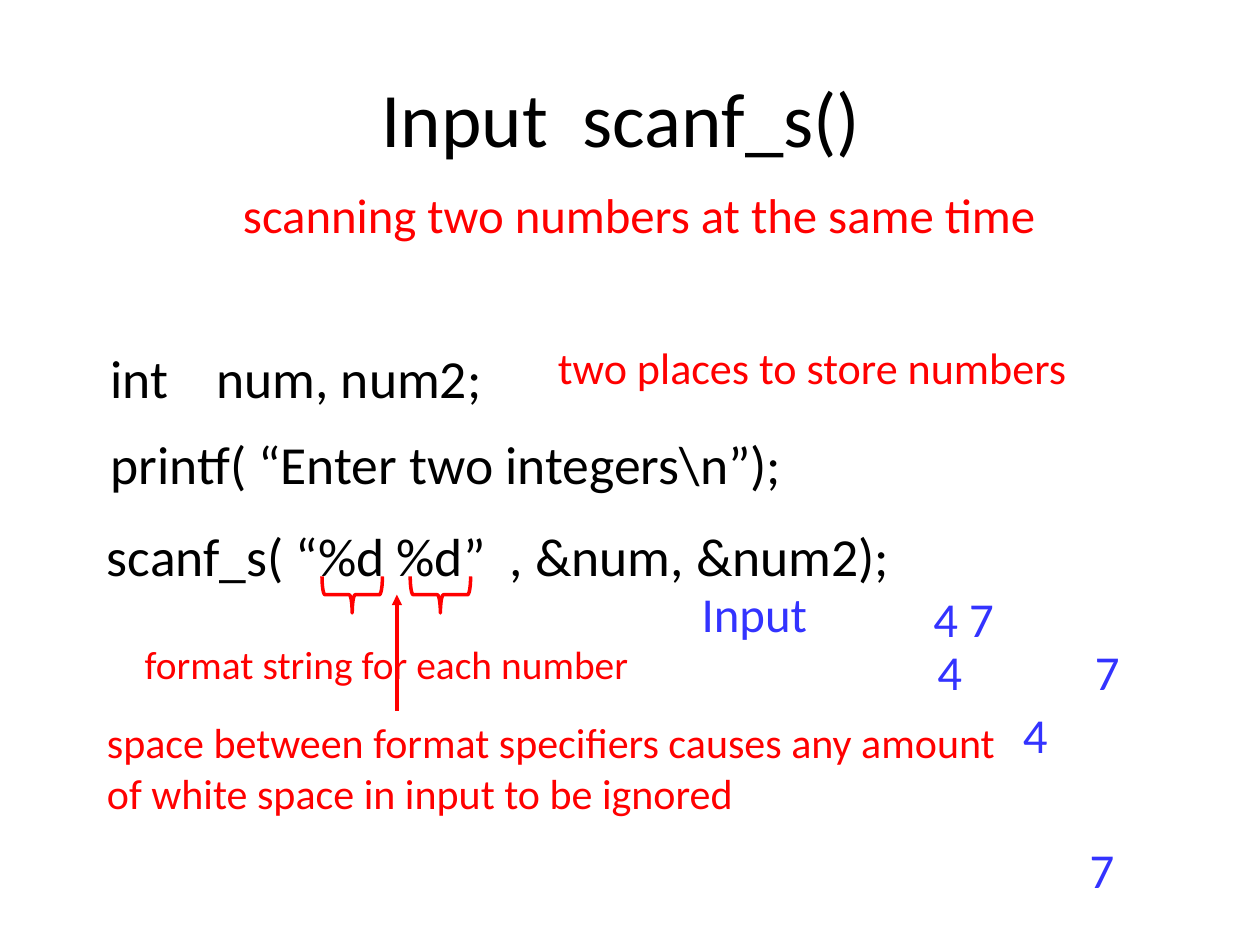
from dataclasses import dataclass

from lxml.etree import SubElement
from pptx import Presentation
from pptx.dml.color import RGBColor
from pptx.enum.shapes import MSO_CONNECTOR as Connector, MSO_SHAPE as Shape
from pptx.enum.text import MSO_ANCHOR as Anchor, PP_ALIGN as Align
from pptx.oxml.ns import qn
from pptx.util import Inches, Pt


@dataclass(frozen=True)
class Theme:
    font: str = "Calibri"
    ink: str = "000000"
    note: str = "FF0000"
    sample: str = "3333FF"
    title_size: float = 44
    code_size: float = 30.6
    lead_size: float = 27.9
    storage_size: float = 25.2
    space_size: float = 24
    format_size: float = 22.5
    stroke: float = 2


@dataclass(frozen=True)
class Box:
    left: float
    top: float
    width: float
    height: float

    def area(self, column, row, columns, rows):
        return Box(self.left + column, self.top + row, columns, rows)

    def lengths(self):
        return [cells(n) for n in (self.left, self.top, self.width, self.height)]


THEME = Theme()
COLUMNS, ROWS = 100, 75


def cells(count):
    return Inches(round(count / 10, 2))


def rgb(value):
    return RGBColor.from_string(value)


def add_text(slide, box, text, size=THEME.lead_size, color=THEME.ink,
             align=Align.LEFT, anchor=Anchor.TOP, tab=None, gap=2, indent=0):
    frame = slide.shapes.add_textbox(*box.lengths()).text_frame
    frame.word_wrap = True
    frame.vertical_anchor = anchor
    for index, line in enumerate(text.split("\n")):
        paragraph = frame.paragraphs[0] if index == 0 else frame.add_paragraph()
        paragraph.alignment = align
        paragraph.space_before = Pt(gap if index else 2)
        properties = paragraph._p.get_or_add_pPr()
        if index and indent:
            properties.set("marL", str(cells(indent)))
        if tab:
            stops = SubElement(properties, qn("a:tabLst"))
            SubElement(stops, qn("a:tab"), pos=str(cells(tab)), algn="l")
        run = paragraph.add_run()
        run.text = line
        run.font.name = THEME.font
        run.font.size = Pt(size)
        run.font.color.rgb = rgb(color)


def style_stroke(line):
    line.color.rgb = rgb(THEME.note)
    line.width = Pt(THEME.stroke)


def add_brace(slide, box):
    brace = slide.shapes.add_shape(Shape.RIGHT_BRACE, *box.lengths())
    brace.rotation = 90
    brace.shadow.inherit = False
    brace.fill.background()
    style_stroke(brace.line)


def add_arrow(slide, column, tail_row, head_row):
    arrow = slide.shapes.add_connector(
        Connector.STRAIGHT, cells(column), cells(tail_row), cells(column), cells(head_row))
    style_stroke(arrow.line)
    SubElement(arrow.line._get_or_add_ln(), qn("a:tailEnd"), type="triangle")
    SubElement(arrow._element.spPr, qn("a:effectLst"))


def place_heading(slide, box):
    add_text(slide, box.area(0, 0, box.width, 12.5), "Input  scanf_s() ",
             size=THEME.title_size, align=Align.CENTER, anchor=Anchor.MIDDLE)
    add_text(slide, box.area(13.3, 11.2, 69.2, 4.9),
             "scanning two numbers at the same time", color=THEME.note)


def place_code(slide, box):
    statements = [
        (0.3, 0, 35.6, "int\tnum, num2;"),
        (0.3, 6.8, 56.4, "printf( “Enter two integers\\n”);"),
        (0, 14.1, 69.2, "scanf_s( “%d %d”  , &num, &num2);"),
    ]
    for column, row, columns, statement in statements:
        add_text(slide, box.area(column, row, columns, 5.3), statement,
                 size=THEME.code_size, tab=8.4 if "\t" in statement else None)
    add_text(slide, box.area(35.8, -0.4, 44.5, 5), "two places to store numbers",
             size=THEME.storage_size, color=THEME.note)


def place_format_notes(slide, box):
    for specifier in range(2):
        add_brace(slide, box.area(19 + 7 * specifier, 0, 2.9, 4.8))
    add_text(slide, box.area(3, 5.5, 44.5, 5), "format string for each number",
             size=THEME.format_size, color=THEME.note)
    add_text(slide, box.area(0, 11.6, 75.8, 9.4),
             "space between format specifiers causes any amount "
             "of white space in input to be ignored",
             size=THEME.space_size, color=THEME.note)
    add_arrow(slide, box.left + 24, box.top + 11.6, box.top + 2.4)


def place_input_samples(slide, box):
    add_text(slide, box.area(0, 0, 12.8, 5), "Input", color=THEME.sample)
    add_text(slide, box.area(18.4, 0.4, 9.8, 5), "4 7", color=THEME.sample)
    add_text(slide, box.area(18.7, 4.6, 23.2, 5), "4\t7", color=THEME.sample, tab=12.5)
    add_text(slide, box.area(25.5, 9.6, 17.3, 15.4), "4\n7",
             color=THEME.sample, gap=44, indent=5.3)


def main():
    deck = Presentation()
    deck.slide_width, deck.slide_height = cells(COLUMNS), cells(ROWS)
    slide = deck.slides.add_slide(deck.slide_layouts[6])
    place_heading(slide, Box(5, 3, 90, 16.1))
    place_code(slide, Box(7.5, 26.9, 80.3, 19.4))
    place_format_notes(slide, Box(7.5, 44.8, 75.8, 21))
    place_input_samples(slide, Box(54.7, 45.8, 42.8, 25))
    deck.save("out.pptx")


if __name__ == "__main__":
    main()
